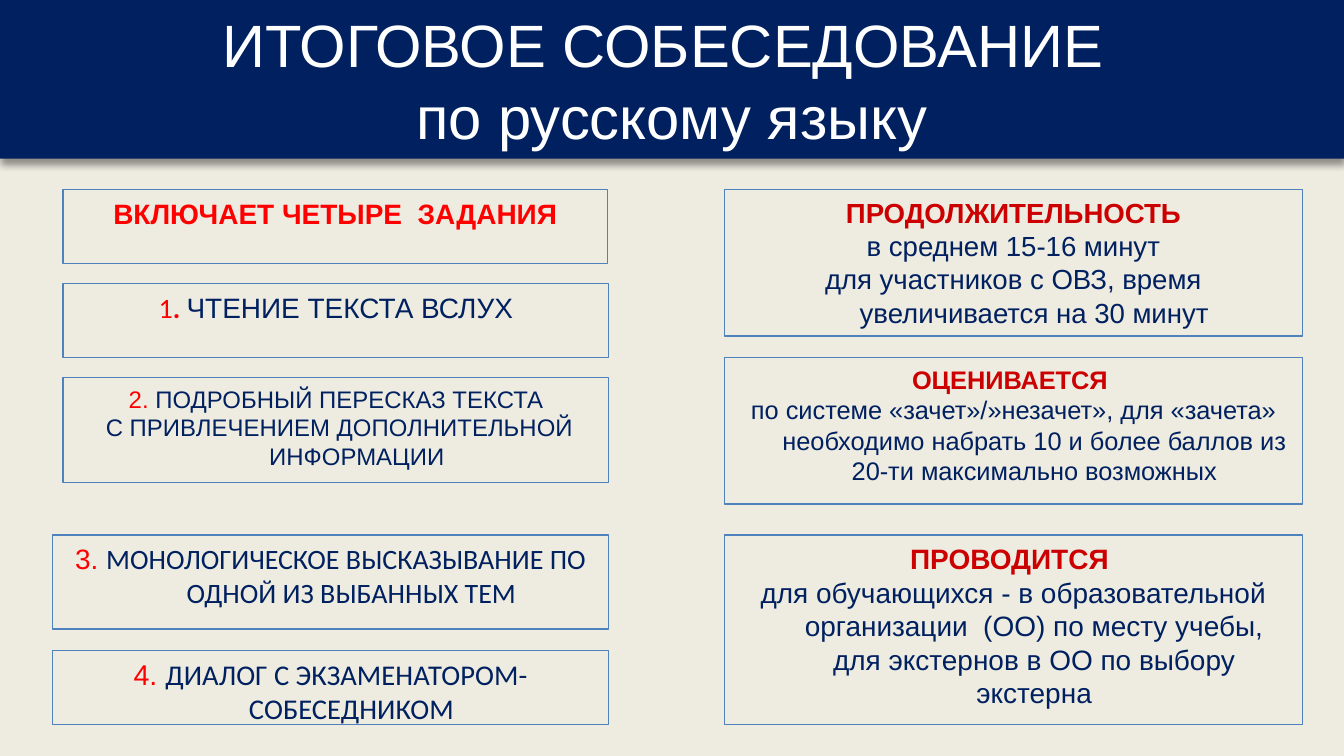
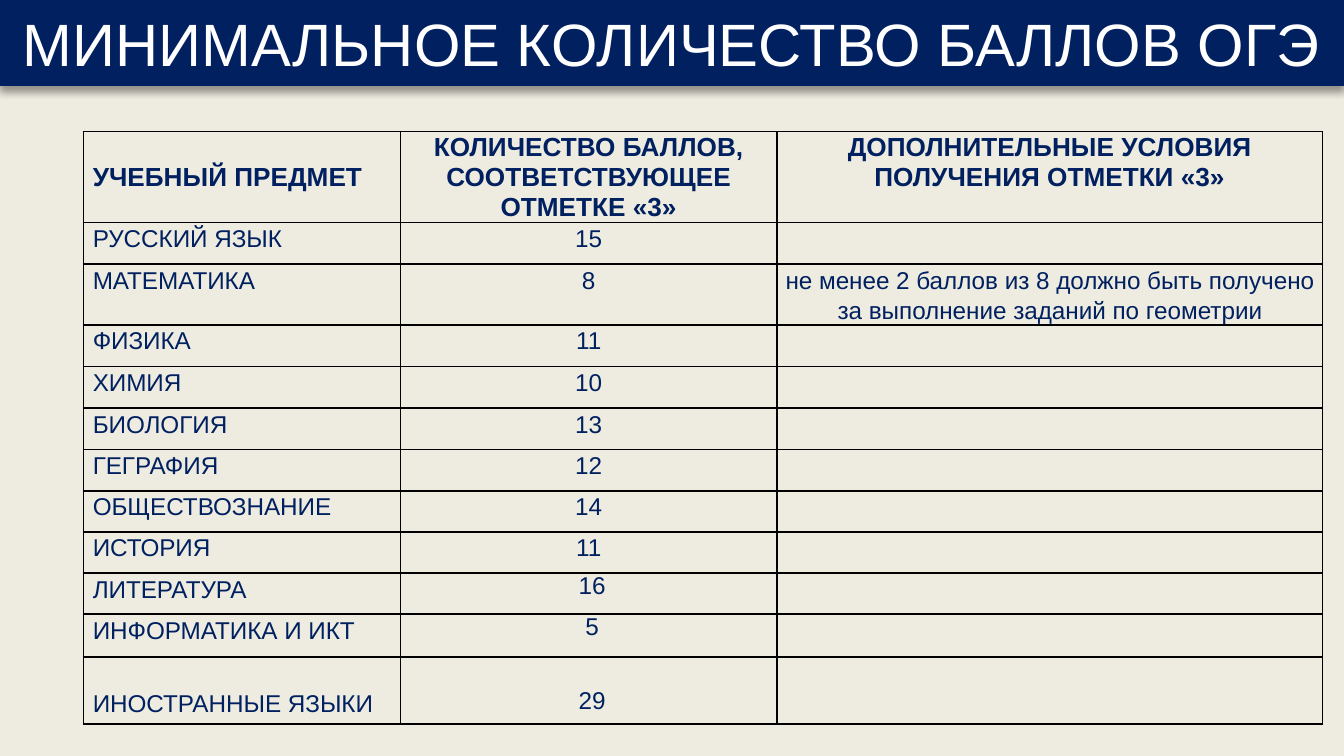
from dataclasses import dataclass

from lxml.etree import SubElement
from pptx import Presentation
from pptx.dml.color import RGBColor
from pptx.enum.shapes import MSO_SHAPE as Shape
from pptx.enum.text import MSO_ANCHOR as Anchor, PP_ALIGN as Align
from pptx.oxml.ns import qn
from pptx.util import Inches, Pt


@dataclass(frozen=True)
class Theme:
    """Colours, fonts and type sizes of the presentation."""
    paper: str = "EEECE1"
    navy: str = "002060"
    white: str = "FFFFFF"
    black: str = "000000"
    red: str = "FF0000"
    crimson: str = "CC0000"
    outline: str = "4F81BD"
    sans: str = "Arial"
    humanist: str = "Calibri"
    title: float = 32
    text: float = 15
    header: float = 14
    body: float = 13
    leading: float = 16.2
    hanging: float = 0.31


THEME = Theme()


def rgb(color):
    """Turn a hex string into a colour."""
    return RGBColor.from_string(color)


def write(paragraph, text, *, size=THEME.text, color=THEME.navy, font=THEME.sans,
          bold=False, align=Align.CENTER, left=0, hanging=0, leading=None, before=0):
    """Append formatted text to a paragraph."""
    paragraph.alignment = align
    paragraph.space_before = Pt(before)
    if leading:
        paragraph.line_spacing = Pt(leading)
    properties = paragraph._p.get_or_add_pPr()
    properties.set("marL", str(Inches(left + hanging)))
    properties.set("indent", str(Inches(-hanging)))
    run = paragraph.add_run()
    run.text = text
    run.font.size = Pt(size)
    run.font.name = font
    run.font.bold = bold
    run.font.color.rgb = rgb(color)


class Deck:
    """Builds slides in one style."""

    def __init__(self, theme):
        """Open an empty presentation."""
        self.theme = theme
        self.presentation = Presentation()
        self.presentation.slide_width = Inches(10)
        self.presentation.slide_height = Inches(5.625)
        self.slide = None

    def new_slide(self, height, *title_lines):
        """Start a slide with its title band."""
        layout = self.presentation.slide_layouts[6]
        self.slide = self.presentation.slides.add_slide(layout)
        backdrop = self.slide.background.fill
        backdrop.solid()
        backdrop.fore_color.rgb = rgb(self.theme.paper)
        band = self.rectangle(0, 0, 10, height, Anchor.MIDDLE)
        band.fill.solid()
        band.fill.fore_color.rgb = rgb(self.theme.navy)
        band.line.fill.background()
        self.drop_shadow(band)
        self.fill_frame(band.text_frame, [[(line, {"color": self.theme.white})]
                                          for line in title_lines], size=self.theme.title)

    def rectangle(self, left, top, width, height, anchor):
        """Add a plain rectangle that wraps its text."""
        shape = self.slide.shapes.add_shape(
            Shape.RECTANGLE, Inches(left), Inches(top), Inches(width), Inches(height))
        shape.shadow.inherit = False
        shape.text_frame.word_wrap = True
        shape.text_frame.vertical_anchor = anchor
        return shape

    def drop_shadow(self, shape):
        """Cast a soft shadow downwards."""
        effects = shape.element.spPr.find(qn("a:effectLst"))
        shadow = SubElement(effects, qn("a:outerShdw"), blurRad=str(Pt(4)),
                            dist=str(Pt(3)), dir="5400000", rotWithShape="0")
        tint = SubElement(shadow, qn("a:srgbClr"), val=self.theme.black)
        SubElement(tint, qn("a:alpha"), val="40000")

    def fill_frame(self, frame, paragraphs, **style):
        """Write lists of (text, format) runs as paragraphs."""
        for index, runs in enumerate(paragraphs):
            paragraph = frame.add_paragraph() if index else frame.paragraphs[0]
            for text, own in runs:
                write(paragraph, text, **{**style, **own})

    def box(self, left, top, width, height, paragraphs, **style):
        """Add an outlined box of text."""
        box = self.rectangle(left, top, width, height, Anchor.TOP)
        box.fill.background()
        box.line.color.rgb = rgb(self.theme.outline)
        box.line.width = Pt(0.75)
        self.fill_frame(box.text_frame, paragraphs, **style)

    def table(self, left, top, widths, heights):
        """Add an unfilled table with black rules."""
        table = self.slide.shapes.add_table(
            len(heights), len(widths), Inches(left), Inches(top),
            Inches(sum(widths)), Inches(sum(heights))).table
        table.first_row = table.horz_banding = False
        for column, width in zip(table.columns, widths):
            column.width = Inches(width)
        for row, height in zip(table.rows, heights):
            row.height = Inches(height)
        for cell in table.iter_cells():
            cell.margin_left = cell.margin_right = cell.margin_top = cell.margin_bottom = 0
            cell.text_frame.paragraphs[0].line_spacing = Pt(self.theme.leading)
            self.cell_borders(cell)
            cell.fill.background()
        return table

    def cell_borders(self, cell):
        """Rule all four sides of a cell."""
        properties = cell._tc.get_or_add_tcPr()
        for side in ("a:lnL", "a:lnR", "a:lnT", "a:lnB"):
            line = SubElement(properties, qn(side), w=str(Pt(1)))
            fill = SubElement(line, qn("a:solidFill"))
            SubElement(fill, qn("a:srgbClr"), val=self.theme.black)


def interview_slide(deck):
    """Describe the oral interview."""
    theme = deck.theme
    number = {"color": theme.red}
    humanist = {"font": theme.humanist}
    deck.new_slide(1.18, "ИТОГОВОЕ СОБЕСЕДОВАНИЕ ", "по русскому языку")

    deck.box(0.47, 1.41, 4.05, 0.55,
             [[("ВКЛЮЧАЕТ ЧЕТЫРЕ  ЗАДАНИЯ", {**number, "bold": True})]], before=3)
    deck.box(0.47, 2.11, 4.06, 0.55,
             [[("1", {**number, **humanist}),
               (". ", {**number, **humanist, "bold": True}),
               ("ЧТЕНИЕ ТЕКСТА ВСЛУХ", {})]], before=3)
    deck.box(0.47, 2.81, 4.06, 0.78,
             [[("2. ", number), ("ПОДРОБНЫЙ ПЕРЕСКАЗ ТЕКСТА", {})],
              [(" С ПРИВЛЕЧЕНИЕМ ДОПОЛНИТЕЛЬНОЙ ИНФОРМАЦИИ", {})]],
             size=12.8, hanging=theme.hanging)
    last_tasks = [
        (3.98, 0.7, 15, "3. ", "МОНОЛОГИЧЕСКОЕ ВЫСКАЗЫВАНИЕ ПО ОДНОЙ ИЗ ВЫБАННЫХ ТЕМ"),
        (4.84, 0.55, 15.3, "4. ", "ДИАЛОГ С ЭКЗАМЕНАТОРОМ-СОБЕСЕДНИКОМ"),
    ]
    for top, height, size, label, task in last_tasks:
        deck.box(0.39, top, 4.14, height, [[(label, number), (task, humanist)]],
                 size=size, hanging=theme.hanging)

    rules = [
        (1.41, 1.09, 14.8, "ПРОДОЛЖИТЕЛЬНОСТЬ",
         ["в среднем 15-16 минут",
          "для участников с ОВЗ, время увеличивается на 30 минут"]),
        (2.66, 1.09, 13.6, "ОЦЕНИВАЕТСЯ ",
         ["по системе «зачет»/»незачет», для «зачета» необходимо набрать "
          "10 и более баллов из 20-ти максимально возможных"]),
        (3.98, 1.41, 15, "ПРОВОДИТСЯ ",
         ["для обучающихся - в образовательной организации  (ОО) по месту учебы, "
          "для экстернов в ОО по выбору экстерна"]),
    ]
    for top, height, size, heading, details in rules:
        paragraphs = [[(heading, {"color": theme.crimson, "bold": True})]]
        paragraphs += [[(detail, {})] for detail in details]
        deck.box(5.39, top, 4.3, height, paragraphs, size=size, hanging=theme.hanging)


def scores_slide(deck):
    """Tabulate the minimum scores."""
    theme = deck.theme
    deck.new_slide(0.64, "МИНИМАЛЬНОЕ КОЛИЧЕСТВО БАЛЛОВ ОГЭ")
    headings = ("УЧЕБНЫЙ ПРЕДМЕТ", "КОЛИЧЕСТВО БАЛЛОВ, СООТВЕТСТВУЮЩЕЕ ОТМЕТКЕ «3»",
                "ДОПОЛНИТЕЛЬНЫЕ УСЛОВИЯ ПОЛУЧЕНИЯ ОТМЕТКИ «3»")
    geometry = "не менее 2 баллов из 8 должно быть получено за выполнение заданий по геометрии"
    subjects = [
        ("РУССКИЙ ЯЗЫК", "15", ""), ("МАТЕМАТИКА", "8", geometry),
        ("ФИЗИКА", "11", ""), ("ХИМИЯ", "10", ""), ("БИОЛОГИЯ", "13", ""),
        ("ГЕГРАФИЯ", "12", ""), ("ОБЩЕСТВОЗНАНИЕ", "14", ""), ("ИСТОРИЯ", "11", ""),
        ("ЛИТЕРАТУРА", "16", ""), ("ИНФОРМАТИКА И ИКТ", "5", ""),
        ("ИНОСТРАННЫЕ ЯЗЫКИ", "29", ""),
    ]
    heights = [0.65, 0.31, 0.42, 0.31, 0.31, 0.31, 0.27, 0.28, 0.27, 0.29, 0.32, 0.5]
    table = deck.table(0.62, 0.98, [2.36, 2.8, 4.06], heights)
    first_loose_row = 9
    for row, entries in enumerate([headings, *subjects]):
        for column, entry in enumerate(entries):
            if not entry:
                continue
            style = {"size": theme.body, "leading": theme.leading}
            if row == 0:
                style.update(size=theme.header, bold=True)
            if column == 0:
                style.update(align=Align.LEFT, left=0.07)
            elif row >= first_loose_row:
                style.update(left=0.05, before=1.2, leading=None)
                table.cell(row, column).text_frame.paragraphs[0].line_spacing = None
            write(table.cell(row, column).text_frame.paragraphs[0], entry, **style)
    for row, column in ((0, 0), (len(subjects), 0), (len(subjects), 1)):
        table.cell(row, column).margin_top = Pt(theme.leading)


def main():
    """Build and save the presentation."""
    deck = Deck(THEME)
    interview_slide(deck)
    scores_slide(deck)
    deck.presentation.save("out.pptx")


if __name__ == "__main__":
    main()
